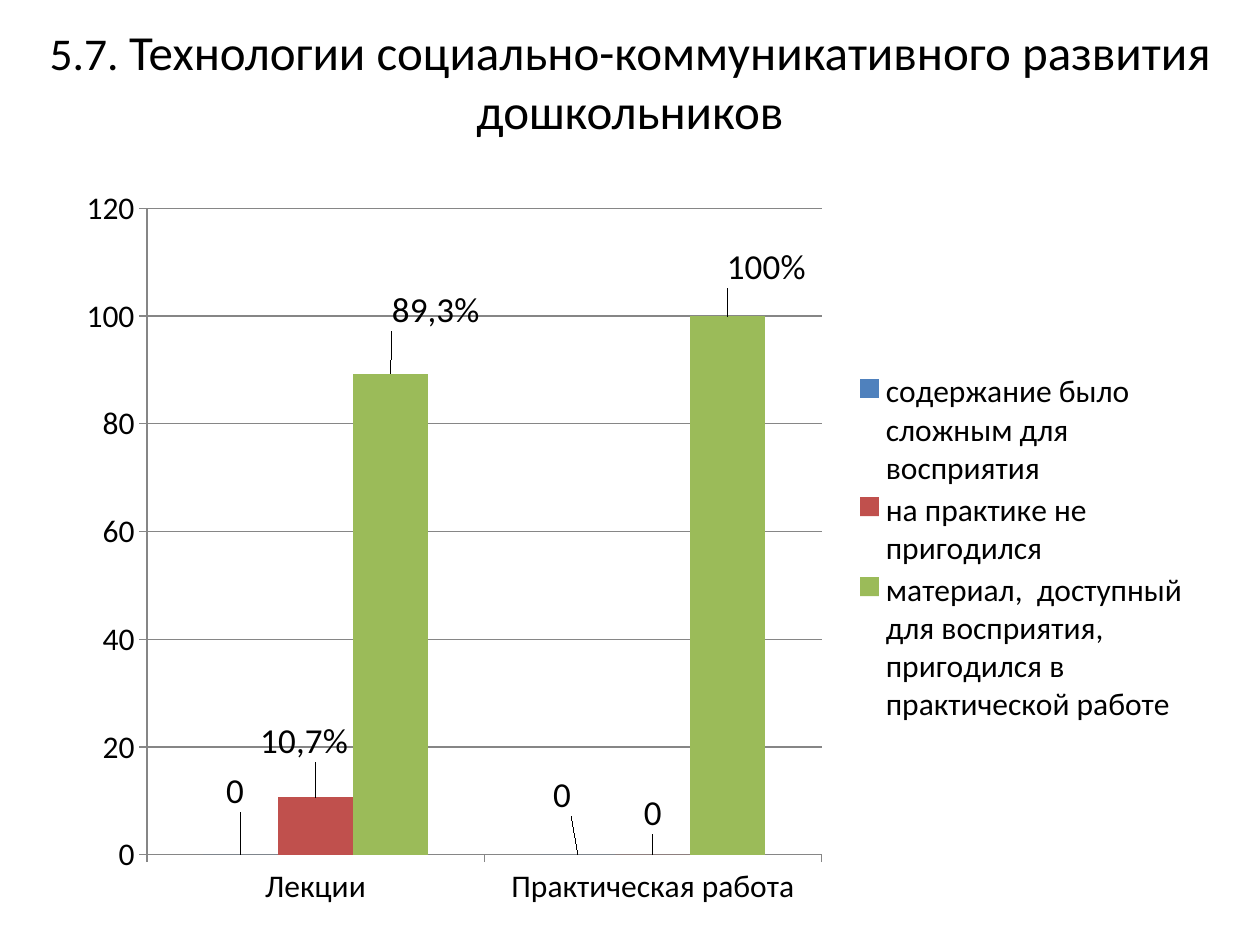
import dataclasses

import pptx
import pptx.chart.data
import pptx.dml.color
import pptx.enum.chart
import pptx.enum.text
import pptx.oxml
import pptx.oxml.ns
import pptx.util


@dataclasses.dataclass(frozen=True)
class Theme:
    font: str = "Calibri"
    text: str = "000000"
    lines: str = "868686"
    series: tuple = ("4F81BD", "C0504D", "9BBB59")
    number_size: int = 26
    title_size: int = 28
    chart_size: int = 18
    label_size: int = 20


CATEGORIES = ("Лекции", "Практическая работа")
# Name, values, and for each value its label text (None shows the value) and shift.
SERIES = (
    ("содержание было сложным для восприятия", (0, 0),
     ((None, -0.005, -0.05), (None, -0.014, -0.045))),
    ("на практике не пригодился", (10.7, 0),
     (("10,7%", -0.01, -0.04), (None, 0, -0.02))),
    ("материал,  доступный для восприятия, пригодился в практической работе",
     (89.3, 100), (("89,3%", 0.04, -0.05), ("100%", 0.034, -0.03))),
)


def rgb(code):
    return pptx.dml.color.RGBColor.from_string(code)


def manual_layout(**values):
    """Return a c:layout element with the given settings, in schema order."""
    items = "".join(f'<c:{name} val="{value}"/>' for name, value in values.items())
    return pptx.oxml.parse_xml(
        f'<c:layout {pptx.oxml.ns.nsdecls("c")}>'
        f"<c:manualLayout>{items}</c:manualLayout></c:layout>")


def place(element, layout):
    """Put the layout after the first child, or first in a plot area."""
    old = element.find(pptx.oxml.ns.qn("c:layout"))
    if old is not None:
        element.remove(old)
    is_plot = element.tag == pptx.oxml.ns.qn("c:plotArea")
    element.insert(0 if is_plot else 1, layout)


class SlideBuilder:
    """Adds styled elements to one slide; lengths are shares of its size."""

    def __init__(self, deck, theme):
        self.deck = deck
        self.theme = theme
        self.page = deck.slides.add_slide(deck.slide_layouts[6])

    def frame(self, left, top, width, height):
        wide, high = self.deck.slide_width, self.deck.slide_height
        return (int(left * wide), int(top * high),
                int(width * wide), int(height * high))

    def style(self, font, size):
        font.name = self.theme.font
        font.size = pptx.util.Pt(size)
        font.bold = False
        font.color.rgb = rgb(self.theme.text)

    def title(self, spans, *area):
        text = self.page.shapes.add_textbox(*self.frame(*area)).text_frame
        text.word_wrap = True
        text.vertical_anchor = pptx.enum.text.MSO_ANCHOR.MIDDLE
        para = text.paragraphs[0]
        para.alignment = pptx.enum.text.PP_ALIGN.CENTER
        for words, size in spans:
            span = para.add_run()
            span.text = words
            self.style(span.font, size)

    def column_chart(self, categories, rows, *area):
        kinds = pptx.enum.chart
        data = pptx.chart.data.CategoryChartData()
        data.categories = categories
        for name, values, _ in rows:
            data.add_series(name, values)
        chart = self.page.shapes.add_chart(
            kinds.XL_CHART_TYPE.COLUMN_CLUSTERED, *self.frame(*area), data).chart
        self.style(chart.font, self.theme.chart_size)
        chart.has_title = False

        plot = chart.plots[0]
        plot.vary_by_categories = False
        plot.gap_width = 150
        plot.overlap = 0
        for series, color, row in zip(plot.series, self.theme.series, rows):
            series.format.fill.solid()
            series.format.fill.fore_color.rgb = rgb(color)
            series.data_labels.show_value = True
            self.style(series.data_labels.font, self.theme.label_size)
            for point, label in enumerate(row[2]):
                self.point_label(series.points[point].data_label, *label)
            marks = series._element.iter(pptx.oxml.ns.qn("c:dLbl"))
            for mark, (_, across, down) in zip(marks, row[2]):
                place(mark, manual_layout(x=across, y=down))

        axis = chart.value_axis
        axis.minimum_scale, axis.maximum_scale, axis.major_unit = 0, 120, 20
        axis.has_major_gridlines = True
        for line in (axis.format.line, axis.major_gridlines.format.line,
                     chart.category_axis.format.line):
            line.color.rgb = rgb(self.theme.lines)
            line.width = pptx.util.Pt(0.75)
        for each in (axis, chart.category_axis):
            each.major_tick_mark = kinds.XL_TICK_MARK.OUTSIDE

        chart.has_legend = True
        chart.legend.position = kinds.XL_LEGEND_POSITION.RIGHT
        chart.legend.include_in_layout = False
        self.style(chart.legend.font, self.theme.chart_size)
        root = chart._chartSpace
        place(next(root.iter(pptx.oxml.ns.qn("c:plotArea"))), manual_layout(
            layoutTarget="inner", xMode="edge", yMode="edge",
            x=0.074, y=0.045, w=0.595, h=0.866))
        place(next(root.iter(pptx.oxml.ns.qn("c:legend"))), manual_layout(
            xMode="edge", yMode="edge", x=0.69, y=0.26, w=0.31, h=0.48))

    def point_label(self, label, words, *_):
        if words:
            para = label.text_frame.paragraphs[0]
            span = para.add_run()
            span.text = words
            self.style(span.font, self.theme.label_size)
        else:
            self.style(label.font, self.theme.label_size)
        label.position = pptx.enum.chart.XL_LABEL_POSITION.OUTSIDE_END


def main():
    deck = pptx.Presentation()
    deck.slide_width = pptx.util.Inches(10)
    deck.slide_height = pptx.util.Inches(7.5)
    theme = Theme()
    builder = SlideBuilder(deck, theme)
    builder.title(
        (("5.7. ", theme.number_size),
         ("Технологии социально-коммуникативного развития дошкольников",
          theme.title_size)),
        0.02, 0.04, 0.96, 0.09)
    builder.column_chart(CATEGORIES, SERIES, 0.05, 0.185, 0.9, 0.79)
    deck.save("out.pptx")


if __name__ == "__main__":
    main()
